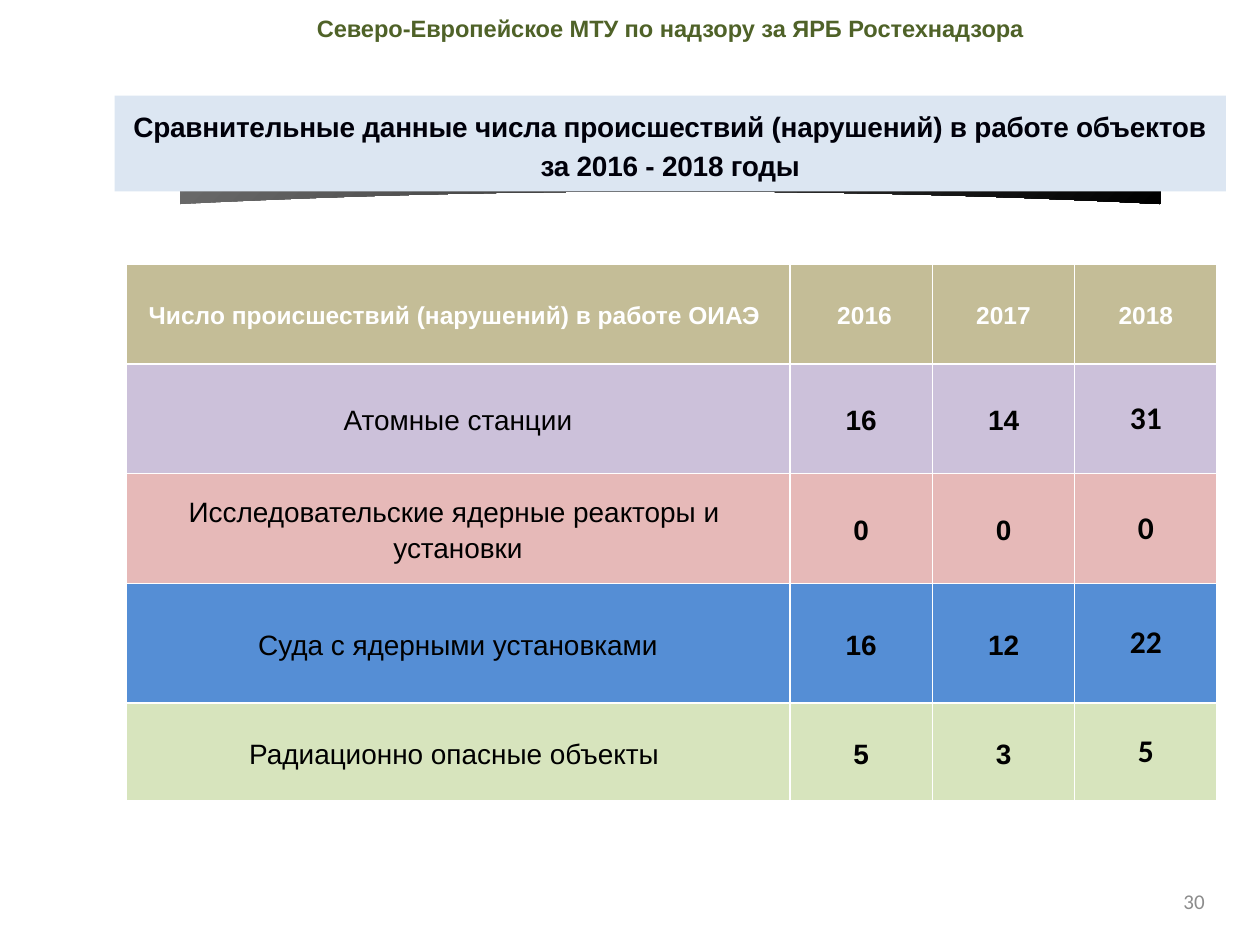
from pptx import Presentation
from pptx.dml.color import RGBColor
from pptx.enum.shapes import MSO_SHAPE as Shape
from pptx.enum.text import MSO_ANCHOR as Anchor, PP_ALIGN as Align
from pptx.oxml import parse_xml
from pptx.oxml.ns import nsdecls
from pptx.util import Inches, Pt

AGENCY = "Северо-Европейское МТУ по надзору за ЯРБ Ростехнадзора"
TITLE = [
    "Сравнительные данные числа происшествий (нарушений) в работе объектов",
    "за 2016 - 2018 годы",
]
PAGE_NUMBER = "30"

# Row height, fill, lines of the label, values by year
ROWS = [
    (0.79, "C4BD97", ["Число происшествий (нарушений) в работе ОИАЭ "], [" 2016", "2017", "2018"]),
    (0.87, "CCC1DA", ["Атомные станции"], ["16", "14", "31"]),
    (0.87, "E6B9B8", ["Исследовательские ядерные реакторы и ", "установки"], ["0", "0", "0"]),
    (0.95, "558ED5", ["Суда с ядерными установками"], ["16", "12", "22"]),
    (0.78, "D7E4BD", ["Радиационно опасные объекты "], ["5", "3", "5"]),
]
COLUMN_WIDTHS = [5.27, 1.13, 1.13, 1.13]

THEME = {
    "title_fill": "DCE6F2",
    "shadow": ("6C6C6C", "000000"),
    "border": "FFFFFF",
    "agency": {"size": 13.5, "name": "Arial", "color": "4F6228", "bold": True},
    "title": {"size": 16, "name": "Arial", "color": "00000A", "bold": True},
    "header": {"size": 14, "name": "Arial", "color": "FFFFFF", "bold": True},
    "label": {"size": 16, "name": "Arial", "color": "000000", "bold": False},
    "value": {"size": 16, "name": "Arial", "color": "000000", "bold": True},
    "latest": {"size": 18, "name": "Calibri", "color": "000000", "bold": True},
    "page": {"size": 12, "name": "Calibri", "color": "8C8C8C", "bold": False},
}


def rgb(value):
    return RGBColor.from_string(value)


def write(text_frame, lines, style, align=Align.CENTER, line_spacing=None):
    """Put one paragraph per line into the frame, all in one theme style."""
    for index, line in enumerate(lines):
        paragraph = text_frame.paragraphs[0] if index == 0 else text_frame.add_paragraph()
        paragraph.alignment = align
        paragraph.line_spacing = line_spacing
        run = paragraph.add_run()
        run.text = line
        for key, value in THEME[style].items():
            if key == "color":
                run.font.color.rgb = rgb(value)
            else:
                setattr(run.font, key, Pt(value) if key == "size" else value)


def add_text(slide, box, lines, style, **layout):
    frame = slide.shapes.add_textbox(*map(Inches, box)).text_frame
    frame.word_wrap = True
    write(frame, lines, style, **layout)
    return frame


def add_curved_shadow(slide, center=5.32, half_width=3.89, steps=11):
    """Draw the dark shape whose lower edge is a parabola, seen under the title."""
    shares = [1 - step / steps for step in range(2 * steps + 1)]
    edge = [(center + half_width * share, 1.52 + 0.1 * share ** 2) for share in shares]
    top = [(center - half_width, 1.35), (center, 1.26), (center + half_width, 1.35)]
    start, *others = [(Inches(x), Inches(y)) for x, y in edge + top]
    builder = slide.shapes.build_freeform(*start)
    builder.add_line_segments(others, close=True)
    shape = builder.convert_to_shape()
    shape.shadow.inherit = False
    shape.line.fill.background()
    shape.fill.gradient()
    shape.fill.gradient_angle = 315
    for position, (stop, color) in enumerate(zip(shape.fill.gradient_stops, THEME["shadow"])):
        stop.position = position
        stop.color.rgb = rgb(color)


def add_title(slide):
    shape = slide.shapes.add_shape(Shape.RECTANGLE, *map(Inches, (0.91, 0.76, 8.82, 0.76)))
    shape.shadow.inherit = False
    shape.fill.solid()
    shape.fill.fore_color.rgb = rgb(THEME["title_fill"])
    shape.line.fill.background()
    frame = shape.text_frame
    frame.word_wrap = False
    frame.vertical_anchor = Anchor.MIDDLE
    write(frame, TITLE, "title", line_spacing=1.15)
    for paragraph in frame.paragraphs:
        paragraph.runs[0].font._element.set("spc", "-10")


def add_borders(cell):
    properties = cell._tc.get_or_add_tcPr()
    for index, side in enumerate(("lnL", "lnR", "lnT", "lnB")):
        properties.insert(index, parse_xml(
            f'<a:{side} {nsdecls("a")} w="{Pt(1)}"><a:solidFill>'
            f'<a:srgbClr val="{THEME["border"]}"/></a:solidFill></a:{side}>'))


def cell_style(row, column):
    if row == 0:
        return "header"
    return ("label", "value", "value", "latest")[column]


def add_incident_table(slide):
    width, height = sum(COLUMN_WIDTHS), sum(row[0] for row in ROWS)
    table = slide.shapes.add_table(
        len(ROWS), len(COLUMN_WIDTHS), *map(Inches, (1, 2.1, width, height))).table
    for column, column_width in zip(table.columns, COLUMN_WIDTHS):
        column.width = Inches(column_width)
    cell_format = {
        "vertical_anchor": Anchor.MIDDLE,
        "margin_left": Inches(0.01), "margin_right": Inches(0.01),
        "margin_top": 0, "margin_bottom": 0,
    }
    for row, (row_height, fill, label, values) in enumerate(ROWS):
        table.rows[row].height = Inches(row_height)
        for column, lines in enumerate([label] + [[value] for value in values]):
            cell = table.cell(row, column)
            for key, value in cell_format.items():
                setattr(cell, key, value)
            cell.fill.solid()
            cell.fill.fore_color.rgb = rgb(fill)
            add_borders(cell)
            style = cell_style(row, column)
            write(cell.text_frame, lines, style,
                  line_spacing=None if style == "latest" else 1.15)


def main():
    presentation = Presentation()
    presentation.slide_width, presentation.slide_height = Inches(10), Inches(7.5)
    slide = presentation.slides.add_slide(presentation.slide_layouts[6])
    add_text(slide, (0.32, 0.09, 10, 0.31), [AGENCY], "agency", line_spacing=0.9)
    add_curved_shadow(slide)
    add_title(slide)
    add_incident_table(slide)
    page = add_text(slide, (7.33, 6.95, 2.33, 0.4), [PAGE_NUMBER], "page", align=Align.RIGHT)
    page.vertical_anchor = Anchor.MIDDLE
    presentation.save("out.pptx")


if __name__ == "__main__":
    main()
